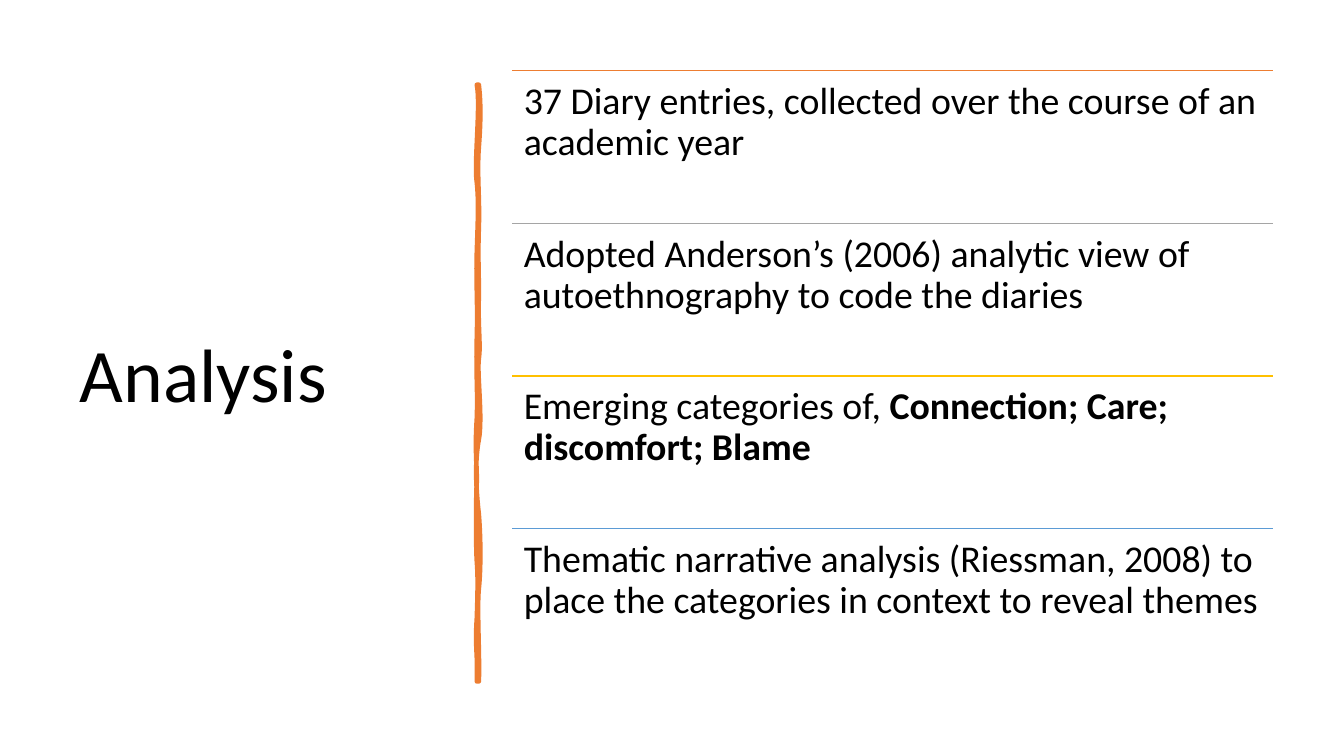
from lxml import etree
from pptx import Presentation
from pptx.dml.color import RGBColor
from pptx.enum.shapes import MSO_CONNECTOR
from pptx.enum.text import MSO_ANCHOR
from pptx.oxml.ns import qn
from pptx.util import Pt

BLACK = RGBColor(0x00, 0x00, 0x00)
ORANGE = RGBColor(0xED, 0x7D, 0x31)
GREY = RGBColor(0xA5, 0xA5, 0xA5)
GOLD = RGBColor(0xFF, 0xC0, 0x00)
BLUE = RGBColor(0x5B, 0x9B, 0xD5)

FONT = "Calibri"
LIST_LEFT, LIST_TOP, LIST_WIDTH, ROW_HEIGHT = 366, 50.5, 543.6, 109

# Each row: rule colour, then (text, bold) spans.
ROWS = [
    (ORANGE, [("37 Diary entries, collected over the course of an academic year", False)]),
    (GREY, [("Adopted Anderson’s (2006) analytic view of autoethnography to code the diaries", False)]),
    (GOLD, [("Emerging categories of, ", False), ("Connection; Care; discomfort; Blame", True)]),
    (BLUE, [("Thematic narrative analysis (Riessman, 2008) to place the categories "
             "in context to reveal themes", False)]),
]

# Brush stroke outlines: cubic curves (control, control, end) in units of 0.72 pt.
BRUSH_UNIT = Pt(0.72)
BRUSH_RIGHT, BRUSH_TOP = 475, 84
BRUSH_EDGE = [
    (477, 102, 477, 119, 475, 146), (473, 173, 476, 195, 475, 226),
    (474, 257, 475, 262, 475, 294), (474, 325, 477, 342, 475, 356),
    (473, 370, 479, 414, 475, 436), (471, 457, 472, 484, 475, 510),
    (477, 536, 477, 564, 475, 584), (473, 603, 476, 650, 475, 676),
    (474, 676, 473, 676, 473, 676), (474, 646, 471, 644, 473, 613),
    (474, 583, 474, 570, 473, 557), (472, 544, 472, 495, 473, 477),
    (473, 459, 471, 445, 473, 415), (474, 386, 472, 373, 473, 335),
    (474, 298, 472, 281, 473, 250), (474, 218, 475, 200, 473, 181),
    (470, 163, 477, 104, 473, 84), (474, 84, 474, 84, 475, 84),
]
BRUSH_BODY = [
    (475, 115, 472, 125, 475, 152), (477, 179, 474, 197, 475, 208),
    (476, 220, 474, 255, 475, 294), (476, 333, 473, 343, 475, 362),
    (477, 381, 477, 397, 475, 430), (472, 463, 475, 474, 475, 516),
    (475, 557, 474, 553, 475, 578), (476, 603, 474, 647, 475, 676),
    (474, 675, 473, 675, 473, 676), (470, 649, 474, 632, 473, 613),
    (472, 595, 475, 569, 473, 539), (471, 510, 476, 500, 473, 471),
    (470, 442, 477, 420, 473, 386), (469, 351, 474, 325, 473, 300),
    (471, 275, 471, 259, 473, 238), (474, 216, 474, 185, 473, 164),
    (471, 143, 475, 121, 473, 84), (474, 84, 474, 84, 475, 84),
]


def lying_points(curve):
    """Turn a curve's points into the frame of the stroke before its quarter turn."""
    return [(y - BRUSH_TOP, BRUSH_RIGHT - x) for x, y in zip(curve[::2], curve[1::2])]


def add_curved_path(path_list, size, curves, **paint):
    path = etree.SubElement(path_list, qn("a:path"), **size, **paint)
    start = etree.SubElement(path, qn("a:moveTo"))
    etree.SubElement(start, qn("a:pt"), x="0", y="0")
    for curve in curves:
        bend = etree.SubElement(path, qn("a:cubicBezTo"))
        for x, y in lying_points(curve):
            etree.SubElement(bend, qn("a:pt"), x=str(x), y=str(y))
    etree.SubElement(path, qn("a:close"))


def add_brush_stroke(slide):
    builder = slide.shapes.build_freeform(0, 0, scale=BRUSH_UNIT)
    builder.add_line_segments([lying_points(curve)[-1] for curve in BRUSH_EDGE])
    stroke = builder.convert_to_shape(Pt(128.2), Pt(272.9))
    stroke.rotation = 90
    stroke.shadow.inherit = False
    stroke.fill.solid()
    stroke.fill.fore_color.rgb = ORANGE
    stroke.line.color.rgb = ORANGE
    stroke.line.width = Pt(3.25)

    path_list = stroke._element.spPr.find(".//" + qn("a:pathLst"))
    straight = path_list[0]
    size = {"w": straight.get("w"), "h": straight.get("h")}
    path_list.remove(straight)
    add_curved_path(path_list, size, BRUSH_EDGE, fill="none")
    add_curved_path(path_list, size, BRUSH_BODY, stroke="0")


def add_rule(slide, top, color):
    rule = slide.shapes.add_connector(
        MSO_CONNECTOR.STRAIGHT, Pt(LIST_LEFT), Pt(top), Pt(LIST_LEFT + LIST_WIDTH), Pt(top))
    rule.line.color.rgb = color
    rule.line.width = Pt(1)
    etree.SubElement(rule._element.spPr, qn("a:effectLst"))


def add_text(slide, bounds, spans, size, inset, anchor):
    box = slide.shapes.add_textbox(*map(Pt, bounds))
    frame = box.text_frame
    frame.word_wrap = True
    frame.vertical_anchor = anchor
    frame.margin_left = frame.margin_right = Pt(inset[0])
    frame.margin_top = frame.margin_bottom = Pt(inset[1])
    para = frame.paragraphs[0]
    para.line_spacing = 0.9
    para.font.name = FONT
    para.font.size = Pt(size)
    para.font.color.rgb = BLACK
    for text, bold in spans:
        span = para.add_run()
        span.text = text
        if bold:
            span.font.bold = True


def main():
    deck = Presentation()
    deck.slide_width, deck.slide_height = Pt(960), Pt(540)
    slide = deck.slides.add_slide(deck.slide_layouts[6])

    add_text(slide, (50, 50, 269.3, 439.9), [("Analysis", False)], 54,
             (7.2, 3.6), MSO_ANCHOR.MIDDLE)
    add_brush_stroke(slide)
    for index, (color, spans) in enumerate(ROWS):
        top = LIST_TOP + index * ROW_HEIGHT
        add_rule(slide, top, color)
        add_text(slide, (LIST_LEFT, top, LIST_WIDTH, ROW_HEIGHT), spans, 27,
                 (8.1, 8.1), MSO_ANCHOR.TOP)

    deck.save("out.pptx")


if __name__ == "__main__":
    main()
